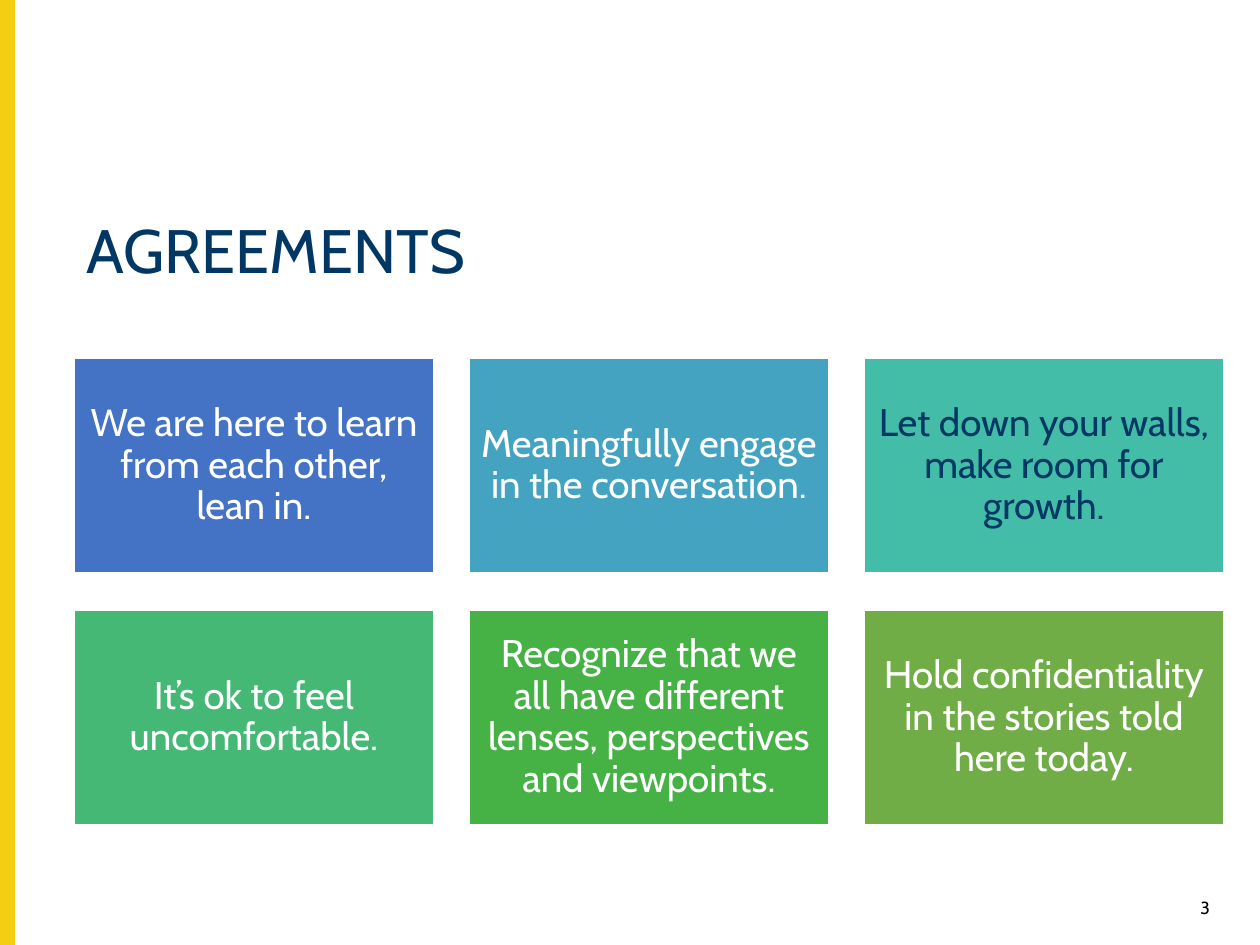
from pptx import Presentation
from pptx.dml.color import RGBColor
from pptx.enum.shapes import MSO_SHAPE
from pptx.enum.text import MSO_ANCHOR, PP_ALIGN
from pptx.util import Inches, Pt

RECTANGLE = MSO_SHAPE.RECTANGLE
TOP, MIDDLE = MSO_ANCHOR.TOP, MSO_ANCHOR.MIDDLE
LEFT, CENTER, RIGHT = PP_ALIGN.LEFT, PP_ALIGN.CENTER, PP_ALIGN.RIGHT

FONT = "Cabin"
COLORS = {
    "stripe": "F4CE12",
    "navy": "003764",
    "white": "FFFFFF",
    "black": "000000",
    "blue": "4472C4",
    "sky": "44A3C0",
    "teal": "43BDA7",
    "mint": "44B874",
    "green": "46B246",
    "olive": "70AD47",
}

PAGE_WIDTH, PAGE_HEIGHT = 10, 7.5
GRID_LEFT, GRID_TOP = 0.59, 2.84
COLUMNS = 3
CARD_WIDTH, CARD_HEIGHT = 2.85, 1.71
COLUMN_STEP, ROW_STEP = 3.135, 2
GRID_WIDTH = COLUMN_STEP * (COLUMNS - 1) + CARD_WIDTH

AGREEMENTS = [
    ("We are here to learn from each other, lean in.", "blue", "white"),
    ("Meaningfully engage in the conversation.", "sky", "white"),
    ("Let down your walls, make room for growth.", "teal", "navy"),
    ("It’s ok to feel uncomfortable.", "mint", "white"),
    ("Recognize that we all have different lenses, perspectives and viewpoints.",
     "green", "white"),
    ("Hold confidentiality in the stories told here today.", "olive", "white"),
]


def color(name):
    return RGBColor.from_string(COLORS[name])


def write(shape, text, size, ink, align, anchor):
    frame = shape.text_frame
    frame.word_wrap = True
    frame.vertical_anchor = anchor
    para = frame.paragraphs[0]
    para.alignment = align
    para.line_spacing = 0.9
    span = para.add_run()
    span.text = text
    span.font.name = FONT
    span.font.size = Pt(size)
    span.font.color.rgb = color(ink)
    return frame


def add_rectangle(page, left, top, width, height, fill, line):
    box = page.shapes.add_shape(RECTANGLE, *map(Inches, (left, top, width, height)))
    box.shadow.inherit = False
    box.fill.solid()
    box.fill.fore_color.rgb = color(fill)
    box.line.color.rgb = color(line)
    box.line.width = Pt(1)
    return box


def add_label(page, left, top, width, height, text, size, ink, align):
    box = page.shapes.add_textbox(*map(Inches, (left, top, width, height)))
    write(box, text, size, ink, align, TOP)


def add_card(page, index, text, fill, ink):
    """Place an agreement in the grid, filled row by row."""
    row, column = divmod(index, COLUMNS)
    box = add_rectangle(page, GRID_LEFT + column * COLUMN_STEP,
                        GRID_TOP + row * ROW_STEP,
                        CARD_WIDTH, CARD_HEIGHT, fill, "white")
    frame = write(box, text, 22, ink, CENTER, MIDDLE)
    frame.margin_left = frame.margin_right = Inches(0.09)
    frame.margin_top = frame.margin_bottom = Inches(0.09)


def main():
    deck = Presentation()
    deck.slide_width, deck.slide_height = Inches(PAGE_WIDTH), Inches(PAGE_HEIGHT)
    page = deck.slides.add_slide(deck.slide_layouts[6])

    add_rectangle(page, 0, 0, 0.11, PAGE_HEIGHT, "stripe", "stripe")
    add_label(page, GRID_LEFT, 1.7, GRID_WIDTH, 0.87, "AGREEMENTS", 35, "navy", LEFT)
    add_label(page, 9.19, 7.09, 0.51, 0.26, "3", 10, "black", RIGHT)
    for index, agreement in enumerate(AGREEMENTS):
        add_card(page, index, *agreement)

    deck.save("out.pptx")


if __name__ == "__main__":
    main()
